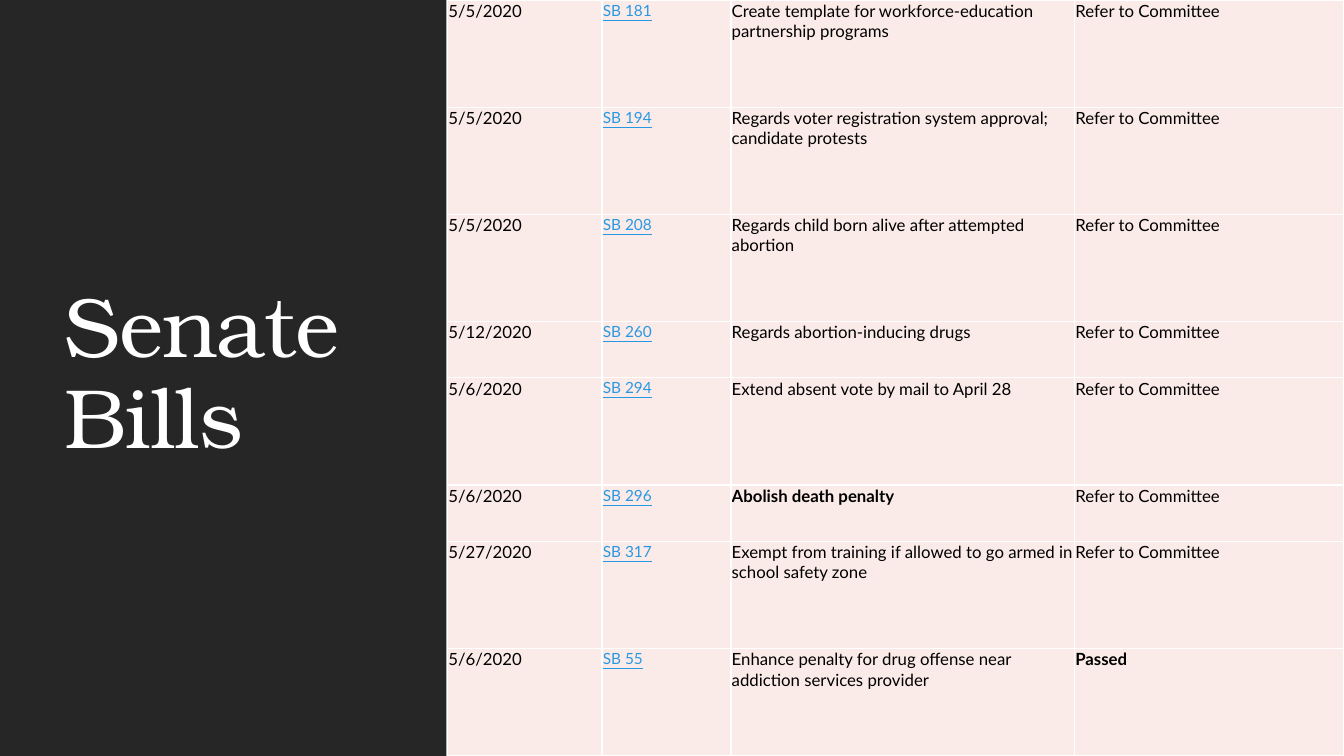
from dataclasses import dataclass

from lxml import etree
from pptx import Presentation
from pptx.dml.color import RGBColor
from pptx.enum.shapes import MSO_SHAPE
from pptx.enum.text import MSO_ANCHOR, MSO_AUTO_SIZE
from pptx.oxml.ns import qn
from pptx.util import Cm, Pt

RECTANGLE = MSO_SHAPE.RECTANGLE
MIDDLE = MSO_ANCHOR.MIDDLE
NO_AUTOFIT = MSO_AUTO_SIZE.NONE

SLIDE_WIDTH, SLIDE_HEIGHT = 33.87, 19.05
TABLE_LEFT = 11.28
COLUMN_WIDTHS = (3.89, 3.25, 8.66, 6.78)
TALL_ROW, SHORT_ROW = 2.7, 1.42
CELL_INSET = 0.02
WHITE, BLACK, CHARCOAL = "FFFFFF", "000000", "262626"
BLUSH, LINK_BLUE = "FBEBE8", "2998E3"
HEADING_FONT, BODY_FONT = "TeX Gyre Bonum", "Lato"


@dataclass(frozen=True)
class Panel:
    left: float
    width: float
    color: str


@dataclass(frozen=True)
class Bill:
    date: str
    number: str
    summary: str
    status: str = "Refer to Committee"
    height: float = TALL_ROW
    bold_summary: bool = False
    bold_status: bool = False


PANELS = (
    Panel(0.02, SLIDE_WIDTH, WHITE),
    Panel(0, 11.25, CHARCOAL),
)

BILLS = (
    Bill("5/5/2020", "SB 181", "Create template for workforce-education partnership programs"),
    Bill("5/5/2020", "SB 194", "Regards voter registration system approval; candidate protests"),
    Bill("5/5/2020", "SB 208", "Regards child born alive after attempted abortion"),
    Bill("5/12/2020", "SB 260", "Regards abortion-inducing drugs", height=SHORT_ROW),
    Bill("5/6/2020", "SB 294", "Extend absent vote by mail to April 28"),
    Bill("5/6/2020", "SB 296", "Abolish death penalty", height=SHORT_ROW, bold_summary=True),
    Bill("5/27/2020", "SB 317", "Exempt from training if allowed to go armed in school safety zone"),
    Bill("5/6/2020", "SB 55", "Enhance penalty for drug offense near addiction services provider",
         status="Passed", bold_status=True),
)


def rgb(color: str) -> RGBColor:
    return RGBColor.from_string(color)


def write_text(frame, text: str, *, font: str = BODY_FONT, size: float = 12,
               color: str = BLACK, bold: bool = False, underline: bool = False,
               line_spacing: float = 1.0, tracking: float = 0) -> None:
    paragraph = frame.paragraphs[0]
    paragraph.line_spacing = line_spacing
    for index, line in enumerate(text.splitlines()):
        if index:
            paragraph.add_line_break()
        run = paragraph.add_run()
        run.text = line
        run.font.name = font
        run.font.size = Pt(size)
        run.font.bold = bold
        run.font.underline = underline
        run.font.color.rgb = rgb(color)
        if tracking:
            run.font._element.set("spc", str(round(tracking * 100)))


def draw_panel(slide, panel: Panel) -> None:
    backdrop = slide.shapes.add_shape(
        RECTANGLE, Cm(panel.left), 0, Cm(panel.width), Cm(SLIDE_HEIGHT))
    backdrop.shadow.inherit = False
    backdrop.fill.solid()
    backdrop.fill.fore_color.rgb = rgb(panel.color)
    backdrop.line.fill.background()


def place_title(slide) -> None:
    title = slide.shapes.title
    title.left, title.top = Cm(1.37), Cm(1.45)
    title.width, title.height = Cm(8.56), Cm(16.03)
    title.element.getparent().append(title.element)
    frame = title.text_frame
    frame.word_wrap = True
    frame.auto_size = NO_AUTOFIT
    frame.vertical_anchor = MIDDLE
    write_text(frame, """Senate
Bills""", font=HEADING_FONT, size=60, color=WHITE, line_spacing=0.9, tracking=-0.5)
    paragraph = frame.paragraphs[0]
    paragraph.alignment = LEFT


def style_cell(cell) -> None:
    cell.margin_left = cell.margin_right = cell.margin_top = Cm(CELL_INSET)
    cell.margin_bottom = 0
    cell.fill.solid()
    cell.fill.fore_color.rgb = rgb(BLUSH)
    properties = cell._tc.get_or_add_tcPr()
    for position, side in enumerate(("a:lnL", "a:lnR", "a:lnT", "a:lnB")):
        border = etree.Element(qn(side), w=str(Pt(1)))
        fill = etree.SubElement(border, qn("a:solidFill"))
        etree.SubElement(fill, qn("a:srgbClr"), val=WHITE)
        properties.insert(position, border)


def draw_bills(slide) -> None:
    table = slide.shapes.add_table(
        len(BILLS), len(COLUMN_WIDTHS), Cm(TABLE_LEFT), 0,
        Cm(sum(COLUMN_WIDTHS)), Cm(sum(bill.height for bill in BILLS))).table
    table.first_row = False
    table.horz_banding = False
    for column, width in zip(table.columns, COLUMN_WIDTHS):
        column.width = Cm(width)
    for row, bill in zip(table.rows, BILLS):
        row.height = Cm(bill.height)
        for cell in row.cells:
            style_cell(cell)
        date, number, summary, status = (cell.text_frame for cell in row.cells)
        write_text(date, bill.date)
        write_text(number, bill.number, size=11, color=LINK_BLUE, underline=True)
        write_text(summary, bill.summary, bold=bill.bold_summary)
        write_text(status, bill.status, bold=bill.bold_status)


def main() -> None:
    presentation = Presentation()
    presentation.slide_width = Cm(SLIDE_WIDTH)
    presentation.slide_height = Cm(SLIDE_HEIGHT)
    slide = presentation.slides.add_slide(presentation.slide_layouts[5])
    for panel in PANELS:
        draw_panel(slide, panel)
    place_title(slide)
    draw_bills(slide)
    presentation.save("out.pptx")


from pptx.enum.text import PP_ALIGN

LEFT = PP_ALIGN.LEFT

if __name__ == "__main__":
    main()
